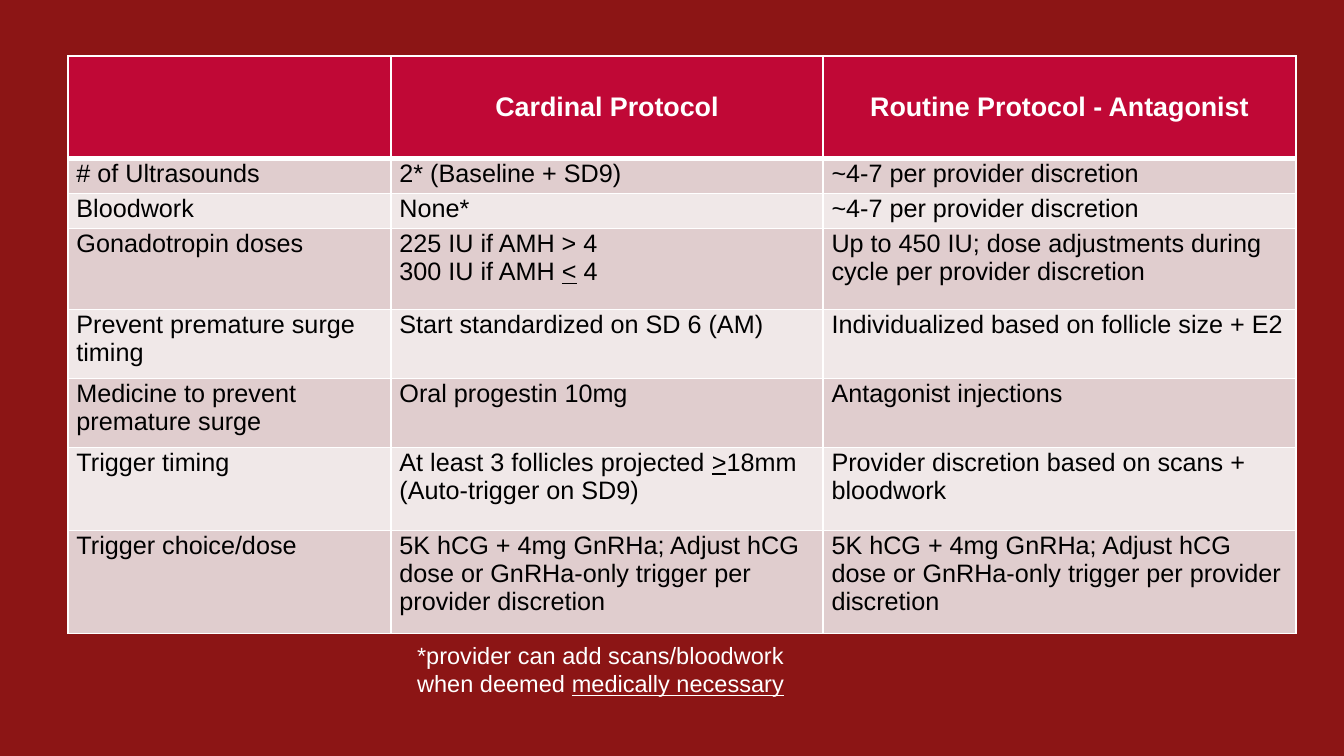
from lxml import etree
from pptx import Presentation
from pptx.dml.color import RGBColor
from pptx.enum.text import MSO_ANCHOR, PP_ALIGN
from pptx.oxml.ns import qn
from pptx.util import Pt

CENTER, LEFT = PP_ALIGN.CENTER, PP_ALIGN.LEFT
TOP, MIDDLE = MSO_ANCHOR.TOP, MSO_ANCHOR.MIDDLE

BACKGROUND = RGBColor(0x8C, 0x15, 0x15)
HEADER = RGBColor(0xC0, 0x08, 0x36)
BANDS = [RGBColor(0xE0, 0xCD, 0xCE), RGBColor(0xF0, 0xE8, 0xE8)]
WHITE = RGBColor(0xFF, 0xFF, 0xFF)
BLACK = RGBColor(0x00, 0x00, 0x00)

HEADER_FONT = {"name": "Arial", "size": Pt(16), "bold": True}
BODY_FONT = {"name": "Arial", "size": Pt(15), "bold": False}
NOTE_FONT = {"name": "Arial", "size": Pt(14)}

CELL_FORMAT = {"margin_left": Pt(5), "margin_right": Pt(5),
               "margin_top": Pt(0.6), "margin_bottom": Pt(0)}

COLUMN_WIDTHS = [192.3, 257.2, 281.5]
ROW_HEIGHTS = [61, 20.9, 20.9, 48.2, 41, 41, 49.6, 61.2]

TRIGGER_DOSE = ("5K hCG + 4mg GnRHa; Adjust hCG dose or GnRHa-only trigger "
                "per provider discretion")
PROTOCOLS = [
    ["", "Cardinal Protocol", "Routine Protocol - Antagonist"],
    ["# of Ultrasounds", "2* (Baseline + SD9)", "~4-7 per provider discretion"],
    ["Bloodwork", "None*", "~4-7 per provider discretion"],
    ["Gonadotropin doses", "225 IU if AMH > 4\n300 IU if AMH _<_ 4",
     "Up to 450 IU; dose adjustments during cycle per provider discretion"],
    ["Prevent premature surge timing", "Start standardized on SD 6 (AM)",
     "Individualized based on follicle size + E2"],
    ["Medicine to prevent premature surge", "Oral progestin 10mg",
     "Antagonist injections"],
    ["Trigger timing",
     "At least 3 follicles projected _>_18mm\n(Auto-trigger on SD9)",
     "Provider discretion based on scans + bloodwork"],
    ["Trigger choice/dose", TRIGGER_DOSE, TRIGGER_DOSE],
]
NOTE = "*provider can add scans/bloodwork when deemed _medically necessary_"


def apply_format(target, values):
    for name, value in values.items():
        setattr(target, name, value)


def write_text(tf, text, font, color, align):
    for i, line in enumerate(text.split("\n")):
        p = tf.add_paragraph() if i else tf.paragraphs[0]
        p.alignment = align
        for j, part in enumerate(line.split("_")):
            if part:
                r = p.add_run()
                r.text = part
                apply_format(r.font, font)
                r.font.underline = j % 2 == 1
                r.font.color.rgb = color


def add_borders(cell, widths):
    tc_pr = cell._tc.get_or_add_tcPr()
    for side, width in widths.items():
        ln = etree.SubElement(tc_pr, qn(f"a:ln{side}"), w=str(Pt(width)))
        fill = etree.SubElement(ln, qn("a:solidFill"))
        etree.SubElement(fill, qn("a:srgbClr"), val=str(WHITE))


def fill_cell(cell, text, row):
    header = row == 0
    apply_format(cell, CELL_FORMAT)
    cell.vertical_anchor = MIDDLE if header else TOP
    add_borders(cell, {"L": 1, "R": 1, "T": 3 if row == 1 else 1,
                       "B": 3 if header else 1})
    cell.fill.solid()
    cell.fill.fore_color.rgb = HEADER if header else BANDS[(row - 1) % 2]
    write_text(cell.text_frame, text, HEADER_FONT if header else BODY_FONT,
               WHITE if header else BLACK, CENTER if header else LEFT)


def add_protocol_table(s, left, top):
    table = s.shapes.add_table(
        len(ROW_HEIGHTS), len(COLUMN_WIDTHS), Pt(left), Pt(top),
        Pt(sum(COLUMN_WIDTHS)), Pt(sum(ROW_HEIGHTS))).table
    apply_format(table, {"first_row": False, "horz_banding": False})
    for column, width in zip(table.columns, COLUMN_WIDTHS):
        column.width = Pt(width)
    for i, (row, height) in enumerate(zip(table.rows, ROW_HEIGHTS)):
        row.height = Pt(height)
        for cell, text in zip(row.cells, PROTOCOLS[i]):
            fill_cell(cell, text, i)


def add_note(s, left, top, width, height):
    sp = s.shapes.add_textbox(Pt(left), Pt(top), Pt(width), Pt(height))
    tf = sp.text_frame
    tf.word_wrap = True
    write_text(tf, NOTE, NOTE_FONT, WHITE, CENTER)


def main():
    prs = Presentation()
    prs.slide_width, prs.slide_height = Pt(800), Pt(450)
    s = prs.slides.add_slide(prs.slide_layouts[6])
    s.background.fill.solid()
    s.background.fill.fore_color.rgb = BACKGROUND
    add_protocol_table(s, 40.5, 33.3)
    add_note(s, 224, 378, 267, 41)
    prs.save("out.pptx")


if __name__ == "__main__":
    main()
